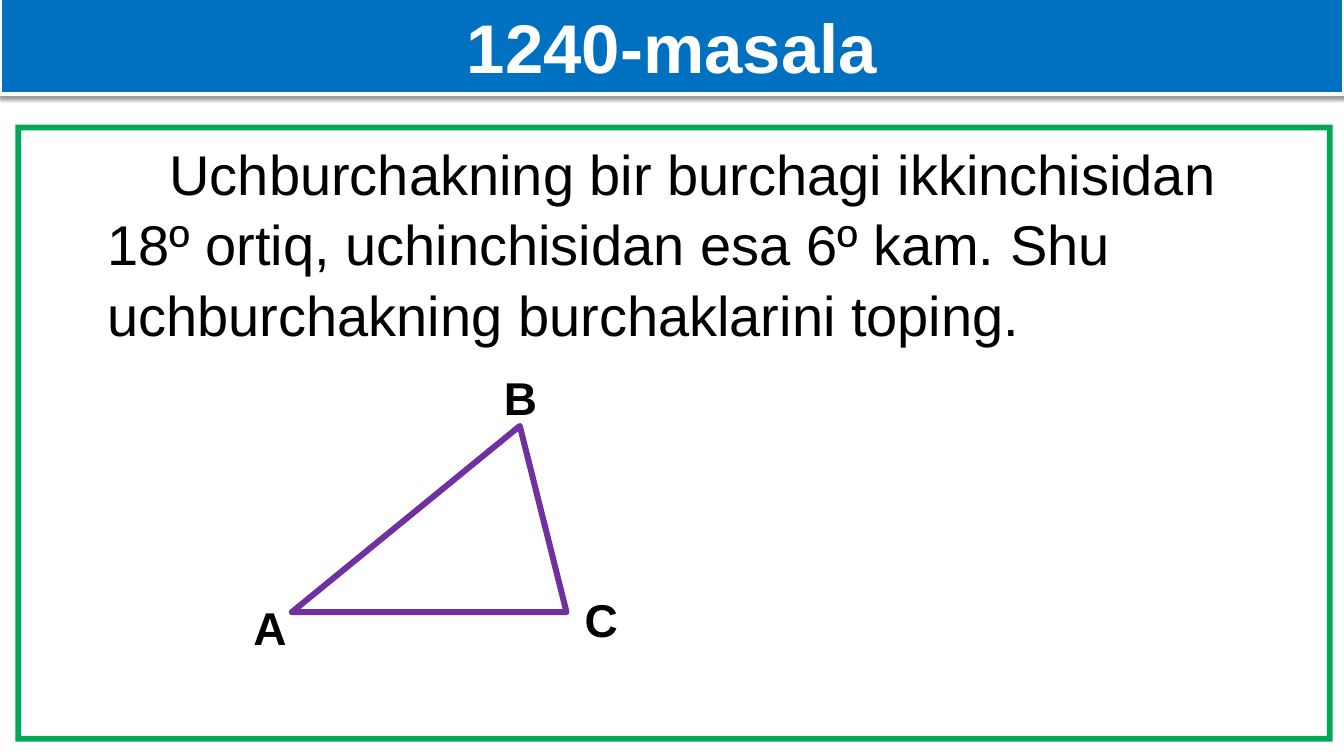
from lxml import etree
from pptx import Presentation
from pptx.dml.color import RGBColor
from pptx.enum.shapes import MSO_SHAPE
from pptx.enum.text import MSO_ANCHOR, PP_ALIGN
from pptx.oxml.ns import qn
from pptx.util import Pt

RECT, FRAME, TRIANGLE = (MSO_SHAPE.RECTANGLE, MSO_SHAPE.FRAME,
                         MSO_SHAPE.ISOSCELES_TRIANGLE)
MIDDLE, TOP = MSO_ANCHOR.MIDDLE, MSO_ANCHOR.TOP
CENTER, LEFT = PP_ALIGN.CENTER, PP_ALIGN.LEFT

FONT = "Arial"
COLORS = {"banner": "0070C0", "frame": "00A859", "triangle": "7030A0",
          "white": "FFFFFF", "black": "000000"}
LINE_SPACING = 1.05


def color(name):
    return RGBColor.from_string(COLORS[name])


def add_shape(s, kind, x, y, w, h, fill=None, line=None, line_width=0):
    sp = s.shapes.add_shape(kind, Pt(x), Pt(y), Pt(w), Pt(h))
    sp.shadow.inherit = False
    if fill:
        sp.fill.solid()
        sp.fill.fore_color.rgb = color(fill)
    else:
        sp.fill.background()
    if line:
        sp.line.color.rgb = color(line)
        sp.line.width = Pt(line_width)
    else:
        sp.line.fill.background()
    return sp


def add_shadow(sp, blur, distance, opacity):
    """Soft black shadow straight below the shape."""
    effects = sp.element.spPr.find(qn("a:effectLst"))
    shadow = etree.SubElement(effects, qn("a:outerShdw"), blurRad=str(Pt(blur)),
                              dist=str(Pt(distance)), dir="5400000", rotWithShape="0")
    black = etree.SubElement(shadow, qn("a:srgbClr"), val=COLORS["black"])
    etree.SubElement(black, qn("a:alpha"), val=str(opacity * 1000))


def set_text(sp, text, size, fill="black", bold=False, align=LEFT, anchor=TOP):
    tf = sp.text_frame
    tf.word_wrap = True
    tf.vertical_anchor = anchor
    p = tf.paragraphs[0]
    p.text = text
    p.alignment = align
    p.font.name, p.font.size, p.font.bold = FONT, Pt(size), bold
    p.font.color.rgb = color(fill)
    return p


def add_text(s, x, y, w, h, text, size, bold=False):
    sp = s.shapes.add_textbox(Pt(x), Pt(y), Pt(w), Pt(h))
    p = set_text(sp, text, size, bold=bold)
    p.line_spacing = LINE_SPACING
    return p


def main():
    prs = Presentation()
    prs.slide_width, prs.slide_height = Pt(1008), Pt(567.36)
    s = prs.slides.add_slide(prs.slide_layouts[6])

    # Content frame
    frame_height, frame_band = 463, 4.3
    frame = add_shape(s, FRAME, 11.5, 93.6, 988, frame_height, fill="frame")
    frame.adjustments[0] = frame_band / frame_height

    # Title banner
    banner = add_shape(s, RECT, 0, -1.5, 1008, 72, "banner", "white", 3)
    add_shadow(banner, blur=3.1, distance=1.6, opacity=38)
    set_text(banner, "1240-masala", 51.7, "white", True, CENTER, MIDDLE)

    # Problem statement with an indented first line
    p = add_text(s, 73.4, 98.6, 856, 160.6,
                 "Uchburchakning bir burchagi ikkinchisidan 18º ortiq, "
                 "uchinchisidan esa 6º kam. Shu uchburchakning burchaklarini toping.",
                 42)
    pPr = p._p.get_or_add_pPr()
    pPr.set("marL", "0")
    pPr.set("indent", str(Pt(46.7)))

    # Triangle and its vertex labels
    triangle = add_shape(s, TRIANGLE, 218.9, 319.7, 206, 139.7,
                         line="triangle", line_width=4.5)
    triangle.adjustments[0] = 0.83
    etree.SubElement(triangle.line._get_or_add_ln(), qn("a:round"))
    for label, x, y in (("A", 182.9, 444.2), ("C", 431.3, 438.5), ("B", 370.8, 271.4)):
        add_text(s, x, y, 36.7, 49, label, 34.5, bold=True)

    prs.save("out.pptx")


if __name__ == "__main__":
    main()
